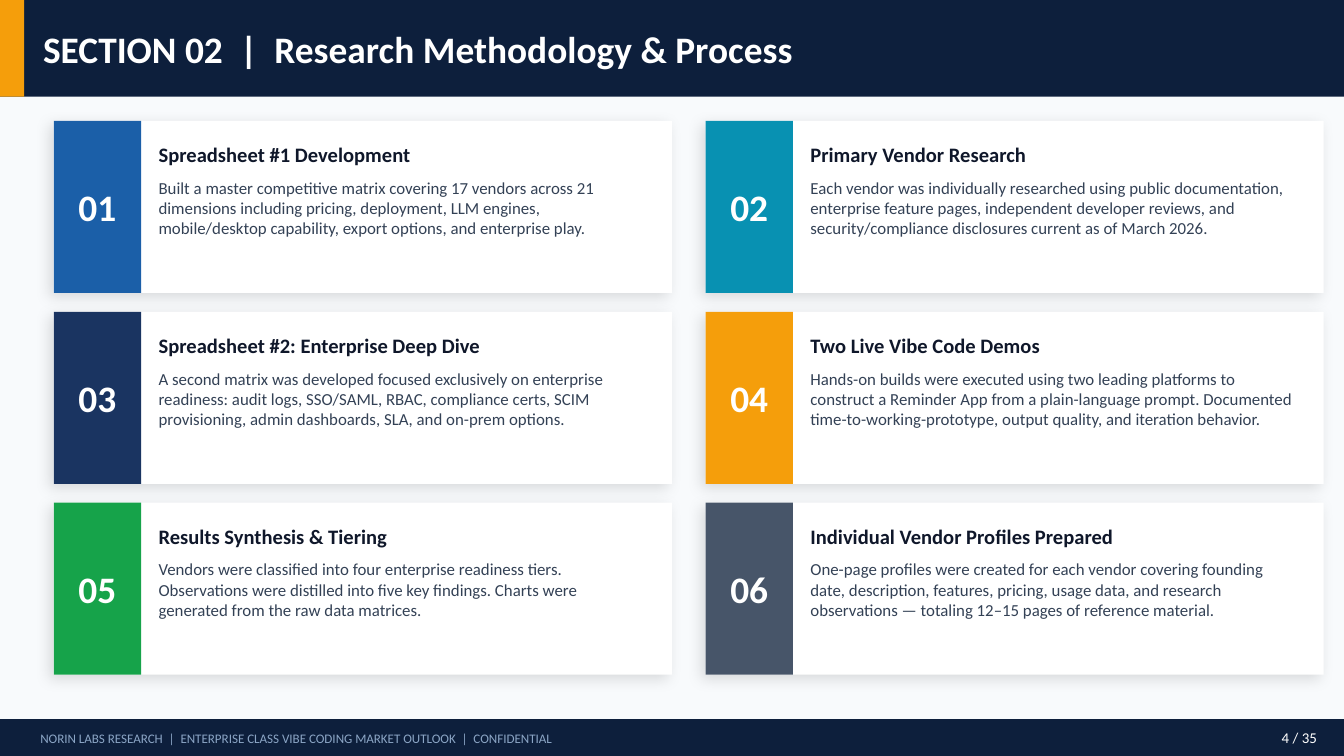
from lxml import etree
from pptx import Presentation
from pptx.dml.color import RGBColor
from pptx.enum.shapes import MSO_SHAPE
from pptx.enum.text import MSO_ANCHOR, PP_ALIGN
from pptx.oxml.ns import qn
from pptx.util import Pt

RECTANGLE = MSO_SHAPE.RECTANGLE
TOP, MIDDLE = MSO_ANCHOR.TOP, MSO_ANCHOR.MIDDLE
LEFT, CENTER, RIGHT = PP_ALIGN.LEFT, PP_ALIGN.CENTER, PP_ALIGN.RIGHT
PX = 4572
TITLE_ONLY = 5

COLORS = {
    "background": "F8FAFC", "navy": "0D1F3C", "amber": "F59E0B",
    "white": "FFFFFF", "heading": "0F172A", "body": "334155",
    "footer": "8BA5C5", "blue": "1B5FA8", "teal": "0891B2",
    "indigo": "1A3461", "green": "16A34A", "slate": "475569",
    "shadow": "000000",
}

STEPS = [
    ("blue", "Spreadsheet #1 Development",
     "Built a master competitive matrix covering 17 vendors across 21 dimensions "
     "including pricing, deployment, LLM engines, mobile/desktop capability, "
     "export options, and enterprise play."),
    ("teal", "Primary Vendor Research",
     "Each vendor was individually researched using public documentation, "
     "enterprise feature pages, independent developer reviews, and "
     "security/compliance disclosures current as of March 2026."),
    ("indigo", "Spreadsheet #2: Enterprise Deep Dive",
     "A second matrix was developed focused exclusively on enterprise readiness: "
     "audit logs, SSO/SAML, RBAC, compliance certs, SCIM provisioning, "
     "admin dashboards, SLA, and on-prem options."),
    ("amber", "Two Live Vibe Code Demos",
     "Hands-on builds were executed using two leading platforms to construct a "
     "Reminder App from a plain-language prompt. Documented "
     "time-to-working-prototype, output quality, and iteration behavior."),
    ("green", "Results Synthesis & Tiering",
     "Vendors were classified into four enterprise readiness tiers. Observations "
     "were distilled into five key findings. Charts were generated from the raw "
     "data matrices."),
    ("slate", "Individual Vendor Profiles Prepared",
     "One-page profiles were created for each vendor covering founding date, "
     "description, features, pricing, usage data, and research observations — "
     "totaling 12–15 pages of reference material."),
]

deck = Presentation()
deck.slide_width, deck.slide_height = 2000 * PX, 1125 * PX
page = deck.slides.add_slide(deck.slide_layouts[TITLE_ONLY])
page.background.fill.solid()
page.background.fill.fore_color.rgb = RGBColor.from_string(COLORS["background"])


def add_block(left, top, width, height, color):
    block = page.shapes.add_shape(
        RECTANGLE, left * PX, top * PX, width * PX, height * PX)
    block.fill.solid()
    block.fill.fore_color.rgb = RGBColor.from_string(COLORS[color])
    block.line.fill.background()
    block.shadow.inherit = False
    return block


def write(box, text, size, color, bold=False, align=LEFT, anchor=MIDDLE):
    frame = box.text_frame
    frame.word_wrap = True
    frame.vertical_anchor = anchor
    frame.margin_left = frame.margin_right = 0
    frame.margin_top = frame.margin_bottom = 0
    para = frame.paragraphs[0]
    para.text = text
    para.alignment = align
    para.font.name = "Calibri"
    para.font.size = Pt(size)
    para.font.bold = bold
    para.font.color.rgb = RGBColor.from_string(COLORS[color])


add_block(0, 0, 2000, 144, "navy")
accent = add_block(0, 0, 36, 144, "amber")
title = page.shapes.title
title.left, title.top, title.width, title.height = 64 * PX, 0, 1500 * PX, 144 * PX
write(title, "SECTION 02  |  Research Methodology & Process", 20, "white", bold=True)
accent.element.addnext(title.element)

for index, (color, heading, body) in enumerate(STEPS):
    row, column = divmod(index, 2)
    left, top = 80 + column * 970, 180 + row * 284

    card = add_block(left, top, 920, 256, "white")
    effects = card.element.spPr.find(qn("a:effectLst"))
    shadow = etree.SubElement(
        effects, qn("a:outerShdw"), blurRad=str(Pt(8)), dist=str(Pt(3)),
        dir=str(135 * 60000), algn="bl", rotWithShape="0")
    tint = etree.SubElement(shadow, qn("a:srgbClr"), val=COLORS["shadow"])
    etree.SubElement(tint, qn("a:alpha"), val="12000")

    number = add_block(left, top, 130, 256, color)
    write(number, f"{index + 1:02d}", 20, "white", bold=True, align=CENTER)

    heading_box = page.shapes.add_textbox(
        (left + 156) * PX, (top + 20) * PX, 730 * PX, 60 * PX)
    write(heading_box, heading, 11, "heading", bold=True)
    body_box = page.shapes.add_textbox(
        (left + 156) * PX, (top + 84) * PX, 730 * PX, 156 * PX)
    write(body_box, body, 9, "body", anchor=TOP)

add_block(0, 1070, 2000, 56, "navy")
footer = page.shapes.add_textbox(60 * PX, 1070 * PX, 1600 * PX, 56 * PX)
write(footer, "NORIN LABS RESEARCH  |  ENTERPRISE CLASS VIBE CODING MARKET OUTLOOK"
      "  |  CONFIDENTIAL", 7, "footer")
page_number = page.shapes.add_textbox(1800 * PX, 1070 * PX, 160 * PX, 56 * PX)
write(page_number, "4 / 35", 8, "white", align=RIGHT)

deck.save("out.pptx")
